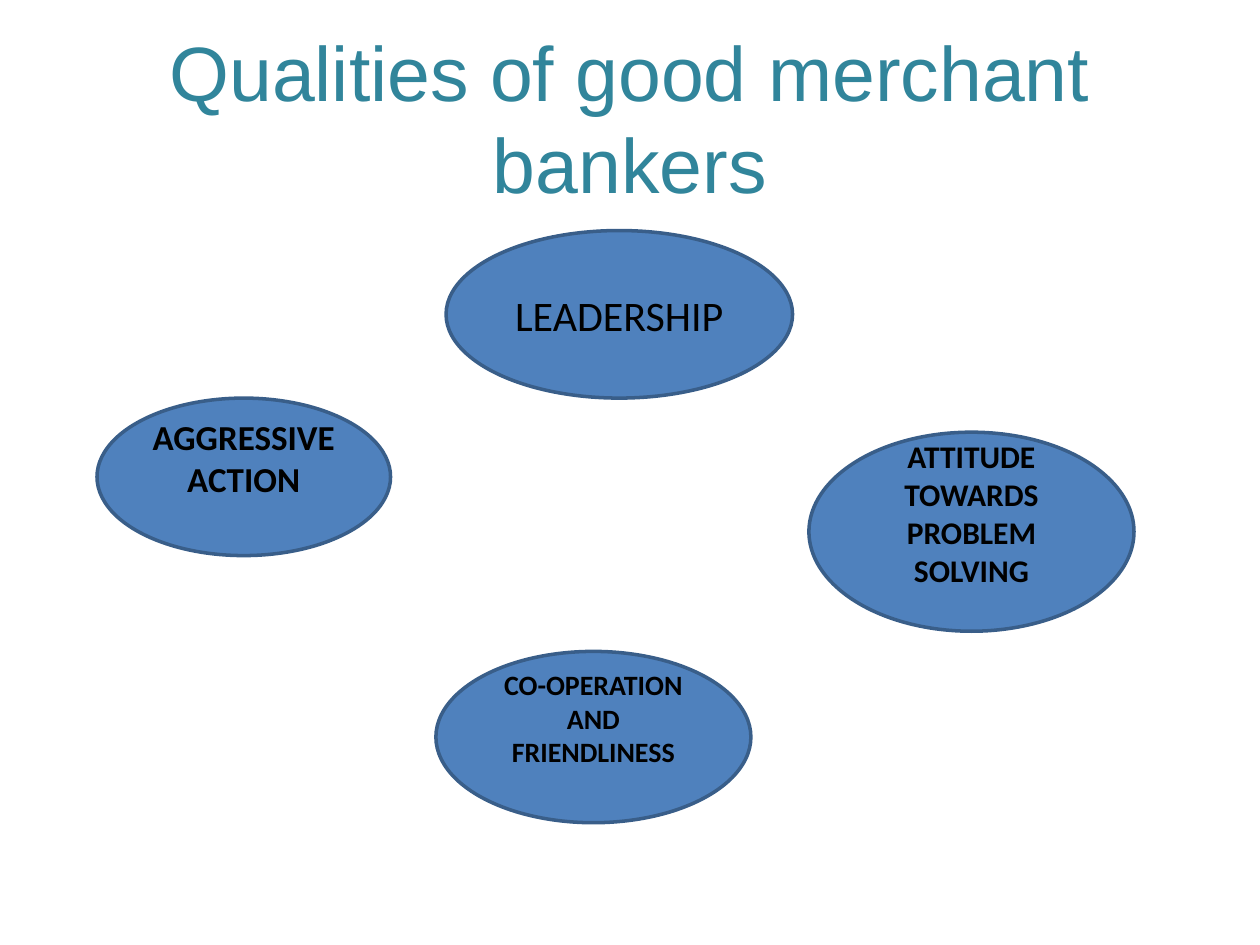
from pptx import Presentation
from pptx.dml.color import RGBColor
from pptx.enum.shapes import MSO_SHAPE
from pptx.enum.text import MSO_ANCHOR, MSO_AUTO_SIZE, PP_ALIGN
from pptx.util import Inches, Pt

ELLIPSE = MSO_SHAPE.OVAL
MIDDLE = MSO_ANCHOR.MIDDLE
CENTER = PP_ALIGN.CENTER
NO_AUTOFIT = MSO_AUTO_SIZE.NONE


def color(value):
    return RGBColor.from_string(value)


class QualitiesSlide:
    """Hold the style and the current slide, and add its elements."""

    title_font, body_font = "Arial", "Calibri"
    title_color, text_color = "31859B", "000000"
    fill_color, line_color = "4F81BD", "395E89"

    def __init__(self, presentation):
        self.slide = presentation.slides.add_slide(presentation.slide_layouts[5])

    def add_text(self, shape, text, size, font, text_color, bold=False):
        frame = shape.text_frame
        frame.word_wrap = True
        frame.auto_size = NO_AUTOFIT
        frame.vertical_anchor = MIDDLE
        paragraph = frame.paragraphs[0]
        paragraph.alignment = CENTER
        run = paragraph.add_run()
        run.text = text
        run.font.name = font
        run.font.size = Pt(size)
        run.font.bold = bold
        run.font.color.rgb = color(text_color)

    def title(self, text, left, top, width, height):
        shape = self.slide.shapes.title
        shape.left, shape.top = Inches(left), Inches(top)
        shape.width, shape.height = Inches(width), Inches(height)
        self.add_text(shape, text, 44, self.title_font, self.title_color)

    def quality(self, text, left, top, width, height, size, bold=True, bottom=0.35):
        shape = self.slide.shapes.add_shape(
            ELLIPSE, Inches(left), Inches(top), Inches(width), Inches(height)
        )
        shape.shadow.inherit = False
        shape.fill.solid()
        shape.fill.fore_color.rgb = color(self.fill_color)
        shape.line.color.rgb = color(self.line_color)
        shape.line.width = Pt(2)
        shape.text_frame.margin_bottom = Inches(bottom)
        self.add_text(shape, text, size, self.body_font, self.text_color, bold)


def main():
    presentation = Presentation()
    presentation.slide_width = Inches(10)
    presentation.slide_height = Inches(7.5)
    page = QualitiesSlide(presentation)
    page.title("Qualities of good merchant bankers", 0.5, 0.3, 9, 1.25)
    page.quality("LEADERSHIP", 3.54, 1.83, 2.75, 1.33, 24, bold=False, bottom=0.05)
    page.quality("AGGRESSIVE ACTION", 0.77, 3.16, 2.33, 1.25, 20)
    page.quality("CO-OPERATION AND FRIENDLINESS", 3.46, 5.17, 2.5, 1.36, 16)
    page.quality("ATTITUDE TOWARDS PROBLEM SOLVING", 6.42, 3.43, 2.58, 1.58, 18)
    presentation.save("out.pptx")


if __name__ == "__main__":
    main()
